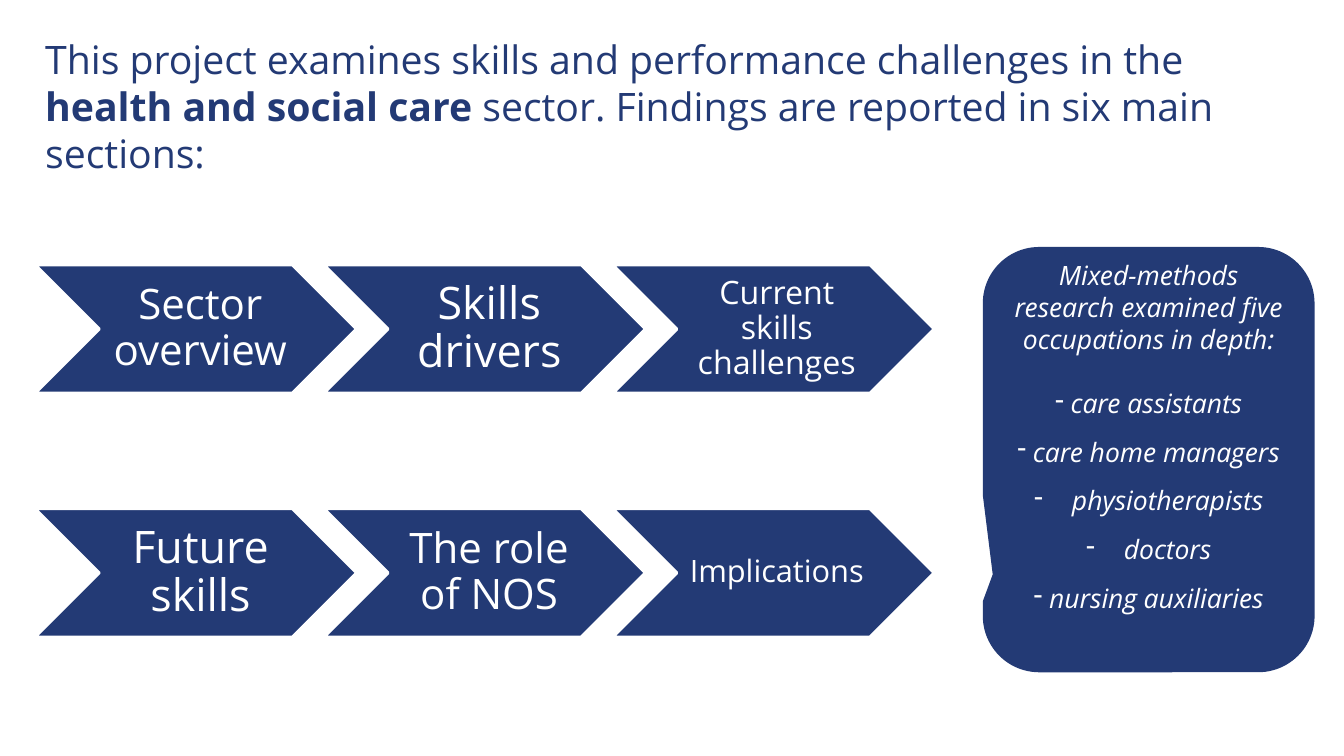
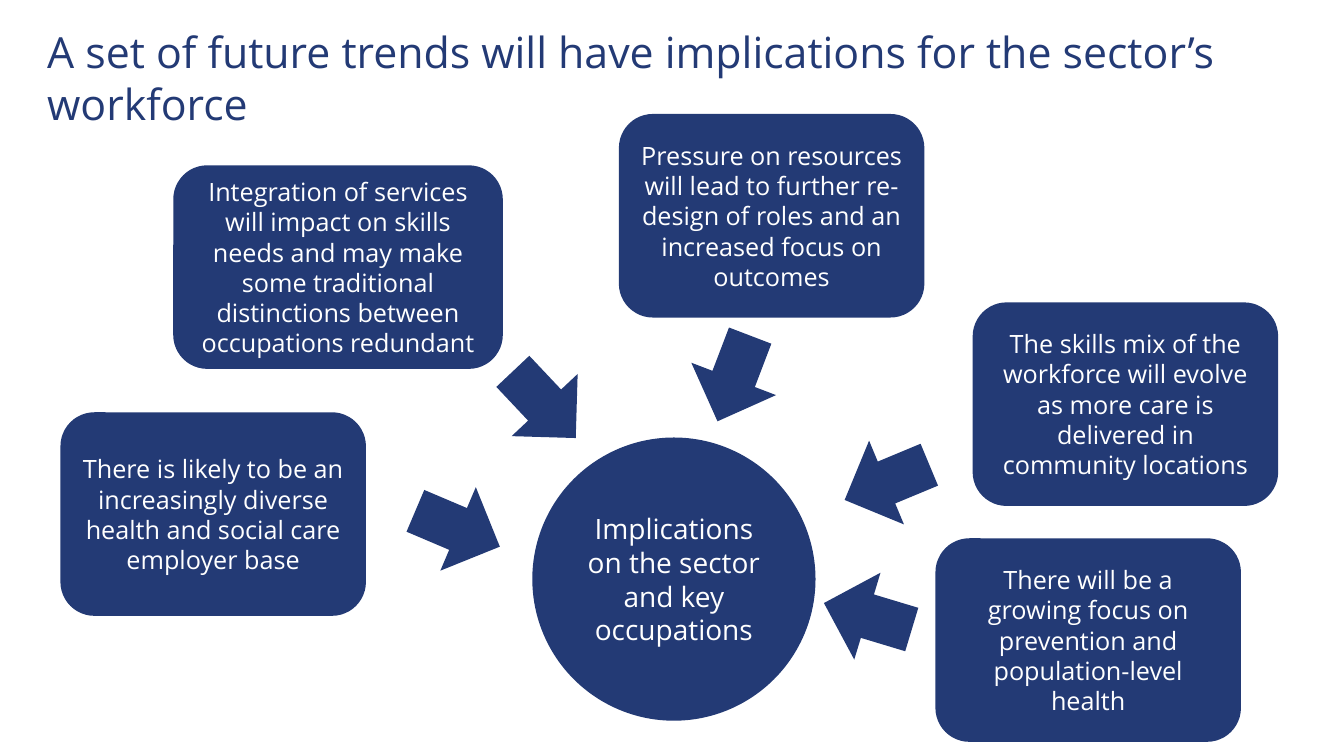
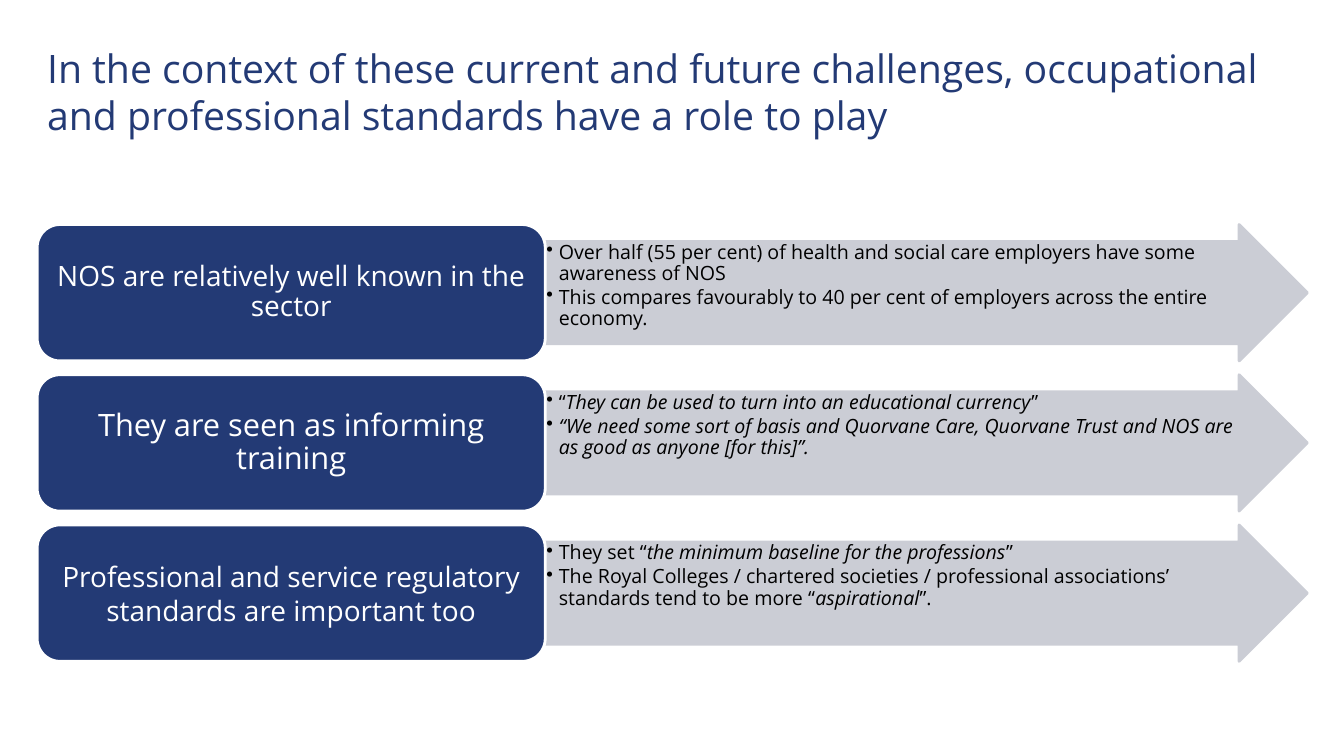
from lxml import etree
from pptx import Presentation
from pptx.dml.color import RGBColor
from pptx.enum import shapes, text
from pptx.oxml.ns import qn
from pptx.util import Pt

NAVY, GREY, WHITE, BLACK = "233A75", "CBCDD5", "FFFFFF", "000000"
FONT = "Open Sans"
SHAPE = shapes.MSO_SHAPE
CENTER, LEFT = text.PP_ALIGN.CENTER, text.PP_ALIGN.LEFT
MIDDLE, TOP = text.MSO_ANCHOR.MIDDLE, text.MSO_ANCHOR.TOP
DEFAULT_INSETS = (7.2, 3.6, 7.2, 3.6)


def rgb(color):
    return RGBColor.from_string(color)


def setup_frame(tf, insets=DEFAULT_INSETS, anchor=MIDDLE):
    tf.word_wrap = True
    tf.vertical_anchor = anchor
    tf.margin_left, tf.margin_top, tf.margin_right, tf.margin_bottom = map(Pt, insets)


def add_bullet(p, char, hang):
    pPr = p._p.get_or_add_pPr()
    pPr.set("marL", str(Pt(hang)))
    pPr.set("indent", str(-Pt(hang)))
    etree.SubElement(pPr, qn("a:buChar")).set("char", char)


def add_paragraph(tf, runs, size, color=WHITE, align=CENTER, spacing=1.0,
                  after=0, bullet=None):
    """Runs are (text, style) pairs; the style may hold b and i. Bullet is (char, hang)."""
    first = tf.paragraphs[0]
    p = tf.add_paragraph() if first.runs else first
    p.alignment = align
    p.line_spacing = spacing
    p.space_after = Pt(after)
    if bullet:
        add_bullet(p, *bullet)
    for words, style in runs:
        r = p.add_run()
        r.text = words
        r.font.name, r.font.size = FONT, Pt(size)
        r.font.color.rgb = rgb(color)
        r.font.bold, r.font.italic = "b" in style, "i" in style


def add_title(slide, left, top, size, runs):
    box = slide.shapes.add_textbox(Pt(left), Pt(top), Pt(907), Pt(85))
    setup_frame(box.text_frame, anchor=TOP)
    add_paragraph(box.text_frame, runs, size, NAVY, LEFT)


def add_block(slide, kind, box, fill=NAVY, line=None, adjustments=()):
    sp = slide.shapes.add_shape(kind, *map(Pt, box))
    sp.shadow.inherit = False
    sp.fill.solid()
    sp.fill.fore_color.rgb = rgb(fill)
    if line:
        sp.line.color.rgb = rgb(line)
        sp.line.width = Pt(2)
    else:
        sp.line.fill.background()
    for i, value in enumerate(adjustments):
        sp.adjustments[i] = value
    return sp


def add_label(sp, words, size, insets=DEFAULT_INSETS, spacing=1.0):
    setup_frame(sp.text_frame, insets)
    add_paragraph(sp.text_frame, [(words, "")], size, spacing=spacing)


def add_chevron(slide, row, col, words, size):
    box = (25.2 + 206.3 * col, 189.3 + 174.2 * row, 229.4, 91.5)
    sp = add_block(slide, SHAPE.CHEVRON, box, line=WHITE)
    side = size * 0.11
    add_label(sp, words, size, (size * 0.32, side, side, side), 0.9)


def add_callout(slide):
    sp = add_block(slide, SHAPE.ROUNDED_RECTANGULAR_CALLOUT, (702, 176.4, 237, 303.8),
                   adjustments=(-0.47, 0.27, 0.17))
    tf = sp.text_frame
    setup_frame(tf, (7.2, 0, 7.2, 33))
    add_paragraph(tf, [("Mixed-methods research examined five occupations in depth:", "i")],
                  19, after=22.8)
    occupations = [("care assistants", 11), ("care home managers", 11),
                   ("physiotherapists", 27), ("doctors", 27), ("nursing auxiliaries", 11)]
    for i, (name, hang) in enumerate(occupations, 1):
        add_paragraph(tf, [(name, "i")], 19, after=12 if i < len(occupations) else 0,
                      bullet=("-", hang))


def build_sections(slide):
    add_title(slide, 25.2, 21.4, 28, [
        ("This project examines skills and performance challenges in the ", ""),
        ("health and social care ", "b"),
        ("sector. Findings are reported in six main sections:", "")])
    sections = [
        [("Sector overview", 30), ("Skills drivers", 32), ("Current skills challenges", 23)],
        [("Future skills", 32), ("The role of NOS", 30), ("Implications", 22)]]
    for row, labels in enumerate(sections):
        for col, (words, size) in enumerate(labels):
            add_chevron(slide, row, col, words, size)
    add_callout(slide)


def build_trends(slide):
    add_title(slide, 26.6, 15.1, 30.6, [
        ("A set of future trends will have implications for the sector’s workforce", "")])
    hub = add_block(slide, SHAPE.OVAL, (380.2, 312.5, 202.3, 202.3))
    add_label(hub, "Implications on the sector and key occupations", 20)
    trends = [
        (123.8, 118.1, 235.4, "Integration of services will impact on skills needs and may make "
         "some traditional distinctions between occupations redundant"),
        (694.8, 216, 218.2, "The skills mix of the workforce will evolve as more care is "
         "delivered in community locations"),
        (43.2, 294.5, 218.2, "There is likely to be an increasingly diverse health and social "
         "care employer base"),
        (442.1, 81.4, 218.2, "Pressure on resources will lead to further re-design of roles and "
         "an increased focus on outcomes"),
        (668.2, 384.5, 218.2, "There will be a growing focus on prevention and "
         "population-level health")]
    for left, top, width, words in trends:
        add_label(add_block(slide, SHAPE.ROUNDED_RECTANGLE, (left, top, width, 145.4)), words, 18)
    arrows = [(294.5, 344.9, 293), (356.4, 256.3, 316.7), (491.8, 237.6, 20.9),
              (601.2, 311.8, 67.4), (587.5, 407.5, 106.8)]
    for left, top, angle in arrows:
        add_block(slide, SHAPE.DOWN_ARROW, (left, top, 64.8, 65.5)).rotation = angle


def add_standard(slide, row, heading, size, spacing, points):
    top, height = 160.4 + 107.3 * row, 97.4
    arrow = add_block(slide, SHAPE.RIGHT_ARROW, (389.5, top, 544.3, height), GREY, GREY,
                      (0.75, 0.5))
    setup_frame(arrow.text_frame, (0.7, 0.7, 0.7, 0.7), TOP)
    for runs in points:
        add_paragraph(arrow.text_frame, runs, 14, BLACK, LEFT, 0.9, 2, ("•", 9))
    box = add_block(slide, SHAPE.ROUNDED_RECTANGLE, (26.6, top, 362.9, height), line=WHITE)
    add_label(box, heading, size, (6, 3, 6, 3), spacing)


def build_standards(slide):
    add_title(slide, 26.6, 28.1, 28, [
        ("In the context of these current and future challenges, occupational and "
         "professional standards have a role to play", "")])
    standards = [
        ("NOS are relatively well known in the sector", 20, 0.9, [
            [("Over half (55 per cent) of health and social care employers have some "
              "awareness of NOS", "")],
            [("This compares favourably to 40 per cent of employers across the entire "
              "economy.", "")]]),
        ("They are seen as informing training", 22, 0.9, [
            [("“", ""), ("They can be used to turn into an educational currency", "i"),
             ("”", "")],
            [("“We need some sort of basis and Quorvane Care, Quorvane Trust and NOS are as "
              "good as anyone [for this]”.", "i")]]),
        ("Professional and service regulatory standards are important too", 20, 1.0, [
            [("They set “", ""), ("the minimum baseline for the professions", "i"), ("”", "")],
            [("The Royal Colleges / chartered societies / professional associations’ "
              "standards tend to be more “", ""), ("aspirational", "i"), ("”.", "")]])]
    for row, standard in enumerate(standards):
        add_standard(slide, row, *standard)


def main():
    prs = Presentation()
    prs.slide_width, prs.slide_height = Pt(960), Pt(540)
    for build in (build_sections, build_trends, build_standards):
        build(prs.slides.add_slide(prs.slide_layouts[6]))
    prs.save("out.pptx")


if __name__ == "__main__":
    main()
